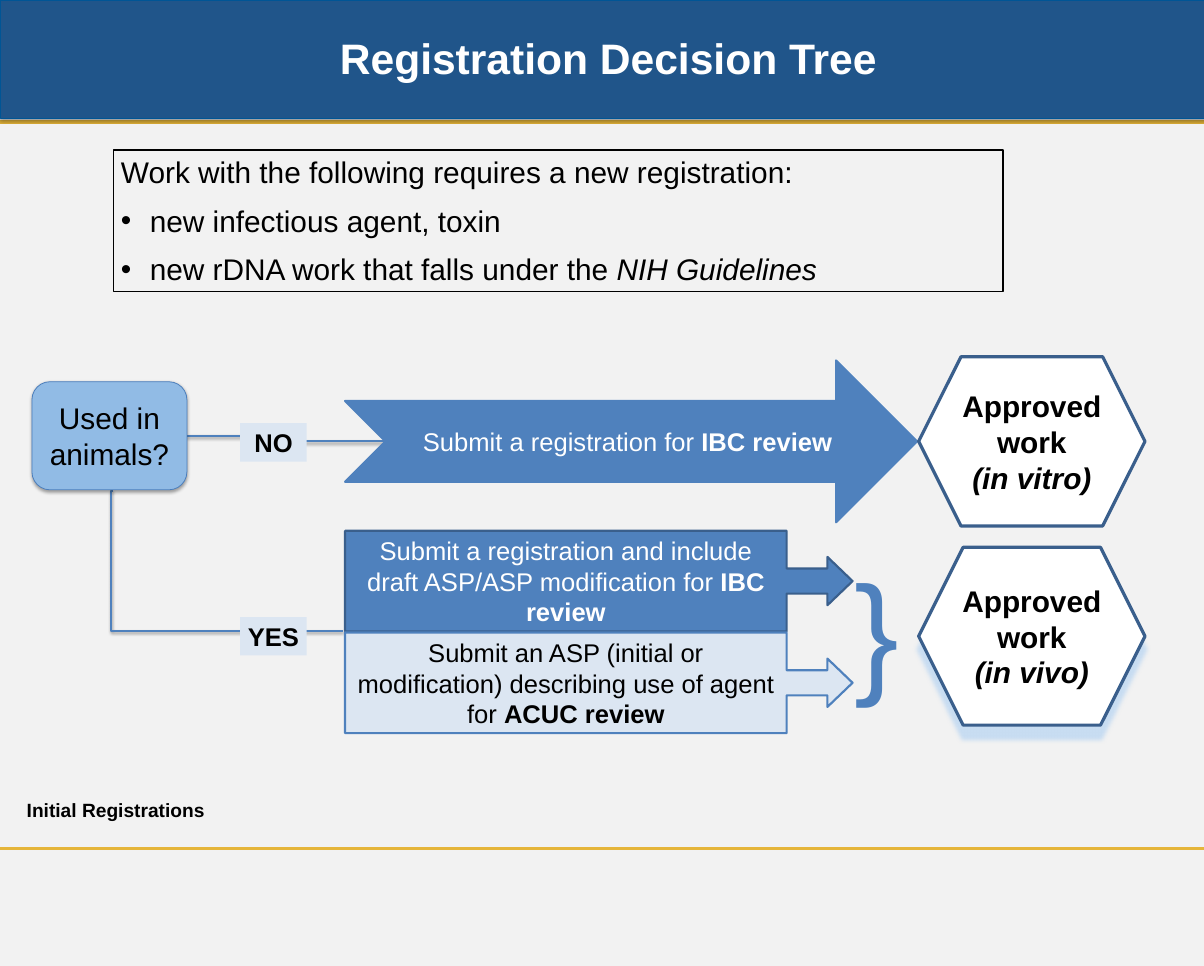
import lxml.etree
import pptx
import pptx.dml.color
import pptx.enum.shapes
import pptx.enum.text
import pptx.oxml.ns
import pptx.util

Pt = pptx.util.Pt
RGBColor = pptx.dml.color.RGBColor
SHAPE = pptx.enum.shapes.MSO_SHAPE
CONNECTOR = pptx.enum.shapes.MSO_CONNECTOR
ANCHOR = pptx.enum.text.MSO_ANCHOR
ALIGN = pptx.enum.text.PP_ALIGN
qn = pptx.oxml.ns.qn

SLIDE_WIDTH, SLIDE_HEIGHT = 1130.4, 907.2
BLACK = RGBColor(0x00, 0x00, 0x00)
WHITE = RGBColor(0xFF, 0xFF, 0xFF)
PALE_GREY = RGBColor(0xF2, 0xF2, 0xF2)
GOLD = RGBColor(0xE5, 0xB5, 0x3A)
NAVY = RGBColor(0x20, 0x55, 0x8A)
NAVY_EDGE = RGBColor(0x00, 0x55, 0x95)
BLUE = RGBColor(0x4F, 0x81, 0xBD)
DARK_BLUE = RGBColor(0x3A, 0x5F, 0x8C)
SKY = RGBColor(0x91, 0xBB, 0xE5)
SKY_EDGE = RGBColor(0x4B, 0x7E, 0xBC)
PALE_BLUE = RGBColor(0xDC, 0xE6, 0xF2)
GLOW_BLUE = RGBColor(0xC8, 0xDD, 0xF2)

# Colour, opacity in percent, blur and distance in points
SHAPE_SHADOW = (BLACK, 35, 3.1, 1.8)
LINE_SHADOW = (BLACK, 38, 3.1, 1.6)
HEXAGON_SHADOW = (GLOW_BLUE, 100, 4, 12)

BOLD = {"bold": True}
BOLD_ITALIC = {"bold": True, "italic": True}
CENTRED = {"alignment": ALIGN.CENTER}
MIDDLE = {"vertical_anchor": ANCHOR.MIDDLE}
LABEL_SIZE = (62.5, 36)
HEXAGON_WIDTH = 212.5


def apply(target, values):
    for name, value in values.items():
        setattr(target, name, value)


def add_effects(properties, shadow):
    """Replace the theme effects with the given downward shadow, or with none."""
    effects = properties.find(qn("a:effectLst"))
    if effects is None:
        effects = lxml.etree.SubElement(properties, qn("a:effectLst"))
    if shadow:
        color, opacity, blur, distance = shadow
        outer = lxml.etree.SubElement(
            effects, qn("a:outerShdw"), blurRad=str(int(Pt(blur))),
            dist=str(int(Pt(distance))), dir="5400000", rotWithShape="0")
        tint = lxml.etree.SubElement(outer, qn("a:srgbClr"), val=str(color))
        lxml.etree.SubElement(tint, qn("a:alpha"), val=str(opacity * 1000))


def add_block(slide, kind, box, fill, line=None, shadow=None, adjustments=()):
    shape = slide.shapes.add_shape(kind, *map(Pt, box))
    shape.fill.solid()
    shape.fill.fore_color.rgb = fill
    if line:
        shape.line.color.rgb, shape.line.width = line[0], Pt(line[1])
    else:
        shape.line.fill.background()
    shape.shadow.inherit = False
    add_effects(shape._element.spPr, shadow)
    for index, value in enumerate(adjustments):
        shape.adjustments[index] = value
    return shape


def add_line(slide, kind, ends, color, width, shadow=None, bend=None):
    connector = slide.shapes.add_connector(kind, *map(Pt, ends))
    connector.line.color.rgb, connector.line.width = color, Pt(width)
    properties = connector._element.spPr
    add_effects(properties, shadow)
    if bend is not None:
        guides = properties.find(qn("a:prstGeom")).get_or_add_avLst()
        lxml.etree.SubElement(guides, qn("a:gd"), name="adj1", fmla=f"val {bend}")


def write(shape, paragraphs, size, color, paragraph_format=CENTRED, frame_format=MIDDLE):
    """Fill a shape with paragraphs, each a list of (text, font format) runs."""
    frame = shape.text_frame
    apply(frame, {"word_wrap": True, **frame_format})
    for index, runs in enumerate(paragraphs):
        paragraph = frame.paragraphs[0] if index == 0 else frame.add_paragraph()
        apply(paragraph, paragraph_format)
        for text, run_format in runs:
            run = paragraph.add_run()
            run.text = text
            apply(run.font, {"name": "Arial", "size": Pt(size), **run_format})
            run.font.color.rgb = color
    return frame


def add_text(slide, box, text, size, color, run_format, anchor=ANCHOR.TOP):
    shape = slide.shapes.add_textbox(*map(Pt, box))
    write(shape, [[(text, run_format)]], size, color,
          {"alignment": ALIGN.LEFT}, {"vertical_anchor": anchor})


def add_rule(slide, left, top, width):
    add_line(slide, CONNECTOR.STRAIGHT, (left, top, left + width, top), GOLD, 3)


def add_header(slide, left, top, width, height):
    add_rule(slide, left, top + height + 3.5, width)
    add_block(slide, SHAPE.RECTANGLE, (left, top, width, height), NAVY,
              (NAVY_EDGE, 0.75), SHAPE_SHADOW)
    add_text(slide, (left + 312, top + 21.5, 762.5, 65.5), "Registration Decision Tree",
             40, WHITE, BOLD, ANCHOR.MIDDLE)


def add_requirements(slide, *box):
    shape = add_block(slide, SHAPE.RECTANGLE, box, PALE_GREY, (BLACK, 1.5))
    paragraphs = [
        [("Work with the following requires a new registration:", {})],
        [("new infectious agent, toxin", {})],
        [("new rDNA work that falls under the ", {}), ("NIH Guidelines", {"italic": True})],
    ]
    frame = write(shape, paragraphs, 28, BLACK,
                  {"alignment": ALIGN.LEFT, "space_after": Pt(12)},
                  {"vertical_anchor": ANCHOR.TOP})
    for paragraph in frame.paragraphs[1:]:
        properties = paragraph._p.get_or_add_pPr()
        properties.set("marL", str(int(Pt(27))))
        properties.set("indent", str(int(Pt(-27))))
        lxml.etree.SubElement(properties, qn("a:buFont"), typeface="Arial")
        lxml.etree.SubElement(properties, qn("a:buChar"), char="•")


def add_question(slide, *box):
    shape = add_block(slide, SHAPE.ROUNDED_RECTANGLE, box, SKY, (SKY_EDGE, 0.75), SHAPE_SHADOW)
    write(shape, [[("Used in animals?", {})]], 28, BLACK)


def add_answer(slide, left, top, text):
    shape = add_block(slide, SHAPE.RECTANGLE, (left, top, *LABEL_SIZE), PALE_BLUE)
    write(shape, [[(text, BOLD)]], 24, BLACK,
          frame_format={**MIDDLE, "margin_left": 0, "margin_right": 0})


def add_outcome(slide, box, setting, shadow=None):
    shape = add_block(slide, SHAPE.HEXAGON, box, WHITE, (DARK_BLUE, 3), shadow)
    write(shape, [[("Approved work", BOLD)], [(setting, BOLD_ITALIC)]], 28, BLACK)


def add_in_vitro_branch(slide, left, top, width, height):
    add_line(slide, CONNECTOR.ELBOW, (left, top + 74.5, left + 186.5, top + 79.5),
             BLUE, 2, LINE_SHADOW)
    add_answer(slide, left + 50, top + 62.5, "NO")
    arrow = add_block(slide, SHAPE.NOTCHED_RIGHT_ARROW,
                      (left + 148.5, top + 3.5, 537, height - 7), BLUE, (BLUE, 2))
    write(arrow, [[("Submit a registration for ", {}), ("IBC review ", BOLD)]], 24, WHITE)
    add_outcome(slide, (left + width - HEXAGON_WIDTH, top, HEXAGON_WIDTH, height), "(in vitro)")


def add_in_vivo_branch(slide, left, top, width, height):
    add_line(slide, CONNECTOR.ELBOW, (left, top, left + 216, top + 131.5),
             BLUE, 2, LINE_SHADOW, bend=-900)
    add_answer(slide, left + 119, top + 118.5, "YES")
    reviews = [
        ("Submit a registration and include draft ASP/ASP modification for ",
         "IBC review", BLUE, DARK_BLUE, WHITE),
        ("Submit an ASP (initial or modification) describing use of agent for ",
         "ACUC review", PALE_BLUE, BLUE, BLACK),
    ]
    for row, (task, review, fill, edge, color) in enumerate(reviews):
        callout = add_block(slide, SHAPE.RIGHT_ARROW_CALLOUT,
                            (left + 217.5, top + 37.5 + row * 95.5, 476.5, 94.5),
                            fill, (edge, 2), adjustments=(0.25, 0.24, 0.25, 0.87))
        write(callout, [[(task, {}), (review, BOLD)]], 24, color)
    add_outcome(slide, (left + width - HEXAGON_WIDTH, top + 53, HEXAGON_WIDTH, height - 53),
                "(in vivo)", HEXAGON_SHADOW)
    add_text(slide, (left + 688.5, top + 49, 40, 159), "}", 125.6, BLUE, {})


def add_footer(slide, left, top, width):
    add_text(slide, (left + 18, top, 334, 29), "Initial Registrations", 18, BLACK, BOLD)
    add_rule(slide, left, top + 51, width)


def main():
    presentation = pptx.Presentation()
    apply(presentation, {"slide_width": Pt(SLIDE_WIDTH), "slide_height": Pt(SLIDE_HEIGHT)})
    slide = presentation.slides.add_slide(presentation.slide_layouts[6])
    slide.background.fill.solid()
    slide.background.fill.fore_color.rgb = PALE_GREY
    add_header(slide, 0, 0, SLIDE_WIDTH, 111)
    add_requirements(slide, 106.5, 141, 835, 133)
    add_in_vitro_branch(slide, 175.5, 335, 899.5, 159)
    add_in_vivo_branch(slide, 106.5, 461, 968.5, 220)
    add_question(slide, 30, 358.5, 145.5, 101.5)
    add_footer(slide, 0, 746, SLIDE_WIDTH)
    presentation.save("out.pptx")


if __name__ == "__main__":
    main()
